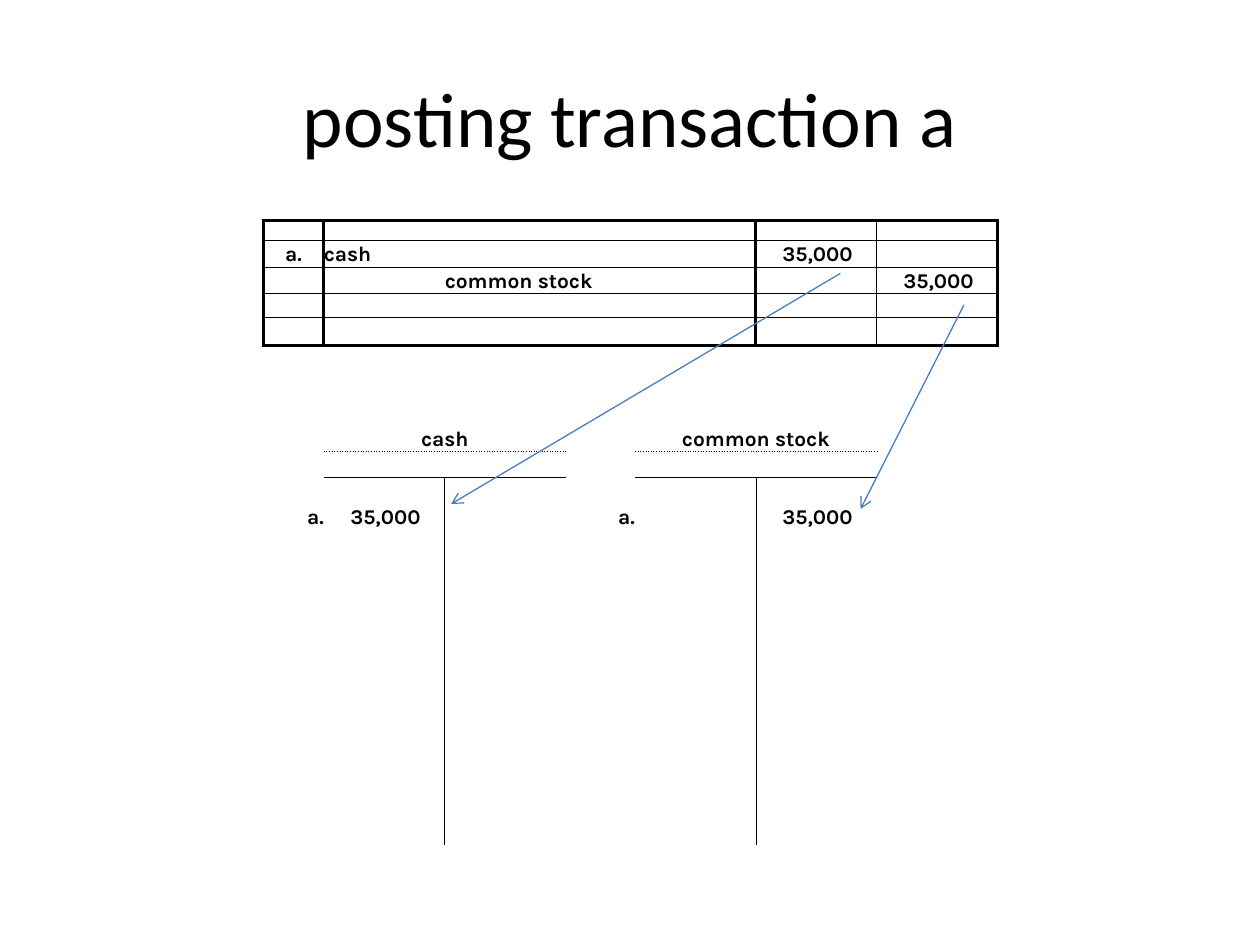
from dataclasses import dataclass

from lxml import etree
from pptx import Presentation
from pptx.dml.color import RGBColor
from pptx.enum.shapes import MSO_CONNECTOR
from pptx.enum.text import MSO_ANCHOR, PP_ALIGN
from pptx.oxml.ns import qn
from pptx.util import Inches, Pt

STRAIGHT = MSO_CONNECTOR.STRAIGHT
MIDDLE, BOTTOM = MSO_ANCHOR.MIDDLE, MSO_ANCHOR.BOTTOM
LEFT, CENTER, RIGHT = PP_ALIGN.LEFT, PP_ALIGN.CENTER, PP_ALIGN.RIGHT


@dataclass(frozen=True)
class Theme:
    ink: str = "000000"
    arrow: str = "4B7EBC"
    title_font: str = "Calibri"
    entry_font: str = "Karla"
    title_size: int = 44
    entry_size: int = 12
    empty_size: int = 8
    thick: float = 2
    thin: float = 0.5
    arrow_width: float = 0.75


THEME = Theme()
THICK, THIN, DOTTED = (THEME.thick, "solid"), (THEME.thin, "solid"), (THEME.thin, "sysDot")

# The grid holds a journal on top and two T accounts below it.
COLS = [0.48, 0.96, 0.96, 0.55, 0.96, 0.96, 0.96]
TABLE_HEIGHT = 4.96
JOURNAL_ROWS = [0.16, 0.21, 0.21, 0.19, 0.22]
SPACER = 0.22
LEDGER_COUNT = 18
LEDGER_ROW = (TABLE_HEIGHT - sum(JOURNAL_ROWS) - SPACER) / LEDGER_COUNT
ROWS = JOURNAL_ROWS + [SPACER] + [LEDGER_ROW] * LEDGER_COUNT
JOURNAL_END = len(JOURNAL_ROWS)
JOURNAL_RULES = {0: THICK, 1: THICK, 5: THICK, 6: THIN, 7: THICK}
ACCOUNT_COLS = (1, 4)
NAME_ROW, ENTRY_ROW = 8, 11
ACCOUNT_RULES = {NAME_ROW + 1: DOTTED, NAME_ROW + 2: THIN}
AMOUNT_INDENT = 0.21

# row, column, text, alignment, indent, columns spanned
ENTRIES = [
    (1, 0, "a.", CENTER, 0, 1),
    (1, 1, "cash", LEFT, 0, 1),
    (1, 5, "35,000", LEFT, AMOUNT_INDENT, 1),
    (2, 2, "common stock", LEFT, 0, 2),
    (2, 6, "35,000", LEFT, AMOUNT_INDENT, 1),
    (NAME_ROW, 1, "cash", CENTER, 0, 2),
    (NAME_ROW, 4, "common stock", CENTER, 0, 2),
    (ENTRY_ROW, 0, "a.", RIGHT, 0, 1),
    (ENTRY_ROW, 1, "35,000", LEFT, AMOUNT_INDENT, 1),
    (ENTRY_ROW, 3, "a.", RIGHT, 0, 1),
    (ENTRY_ROW, 5, "35,000", LEFT, AMOUNT_INDENT, 1),
]


def format_run(r, font, size, bold=False):
    r.font.name = font
    r.font.size = Pt(size)
    r.font.bold = bold
    r.font.color.rgb = RGBColor.from_string(THEME.ink)


def add_title(slide, text):
    sp = slide.shapes.title
    sp.left, sp.top = Inches(0.5), Inches(0.3)
    sp.width, sp.height = Inches(9), Inches(1.25)
    tf = sp.text_frame
    tf.text = text
    tf.vertical_anchor = MIDDLE
    p = tf.paragraphs[0]
    p.alignment = CENTER
    format_run(p.runs[0], THEME.title_font, THEME.title_size)


def column_rule(row, x):
    """Return the rule on vertical grid line x beside a row, or None."""
    if row < JOURNAL_END:
        return JOURNAL_RULES.get(x)
    if row >= NAME_ROW + 2 and x - 1 in ACCOUNT_COLS:
        return THIN
    return None


def row_rule(y, col):
    """Return the rule on horizontal grid line y along a column, or None."""
    if y <= JOURNAL_END:
        return THICK if y in (0, JOURNAL_END) else THIN
    if any(col in (start, start + 1) for start in ACCOUNT_COLS):
        return ACCOUNT_RULES.get(y)
    return None


def set_border(cell, tag, rule):
    ln = etree.SubElement(cell._tc.get_or_add_tcPr(), qn(tag))
    if rule is None:
        etree.SubElement(ln, qn("a:noFill"))
        return
    width, dash = rule
    ln.set("w", str(int(Pt(width))))
    fill = etree.SubElement(ln, qn("a:solidFill"))
    etree.SubElement(fill, qn("a:srgbClr"), val=THEME.ink)
    etree.SubElement(ln, qn("a:prstDash"), val=dash)


def format_cell(cell, row, col):
    cell.margin_left = cell.margin_right = cell.margin_top = cell.margin_bottom = 0
    cell.vertical_anchor = BOTTOM
    set_border(cell, "a:lnL", column_rule(row, col))
    set_border(cell, "a:lnR", column_rule(row, col + 1))
    set_border(cell, "a:lnT", row_rule(row, col))
    set_border(cell, "a:lnB", row_rule(row + 1, col))
    cell.fill.background()
    # A small end mark keeps an empty cell from stretching its row.
    p = cell.text_frame.paragraphs[0]
    etree.SubElement(p._p, qn("a:endParaRPr"), sz=str(THEME.empty_size * 100))


def write_entry(table, row, col, text, alignment, indent, span):
    cell = table.cell(row, col)
    if span > 1:
        cell.merge(table.cell(row, col + span - 1))
    cell.margin_left = Inches(indent)
    p = cell.text_frame.paragraphs[0]
    p.text = text
    p.alignment = alignment
    format_run(p.runs[0], THEME.entry_font, THEME.entry_size, bold=True)


def add_accounts(slide):
    frame = slide.shapes.add_table(len(ROWS), len(COLS), Inches(2.09), Inches(1.75),
                                   Inches(sum(COLS)), Inches(TABLE_HEIGHT))
    table = frame.table
    table.first_row = table.horz_banding = False
    for column, width in zip(table.columns, COLS):
        column.width = Inches(width)
    for row, height in enumerate(ROWS):
        table.rows[row].height = Inches(height)
        for col in range(len(COLS)):
            format_cell(table.cell(row, col), row, col)
    for entry in ENTRIES:
        write_entry(table, *entry)


def add_arrow(slide, start, end):
    x1, y1, x2, y2 = (Inches(v) for v in start + end)
    line = slide.shapes.add_connector(STRAIGHT, x1, y1, x2, y2)
    line.line.color.rgb = RGBColor.from_string(THEME.arrow)
    line.line.width = Pt(THEME.arrow_width)
    etree.SubElement(line.line._get_or_add_ln(), qn("a:tailEnd"), type="arrow")
    etree.SubElement(line._element.spPr, qn("a:effectLst"))


def main():
    prs = Presentation()
    prs.slide_width, prs.slide_height = Inches(10), Inches(7.5)
    slide = prs.slides.add_slide(prs.slide_layouts[5])
    add_title(slide, "posting transaction a")
    add_accounts(slide)
    add_arrow(slide, (6.67, 2.17), (3.58, 4))
    add_arrow(slide, (7.65, 2.42), (6.83, 4.04))
    prs.save("out.pptx")


if __name__ == "__main__":
    main()
